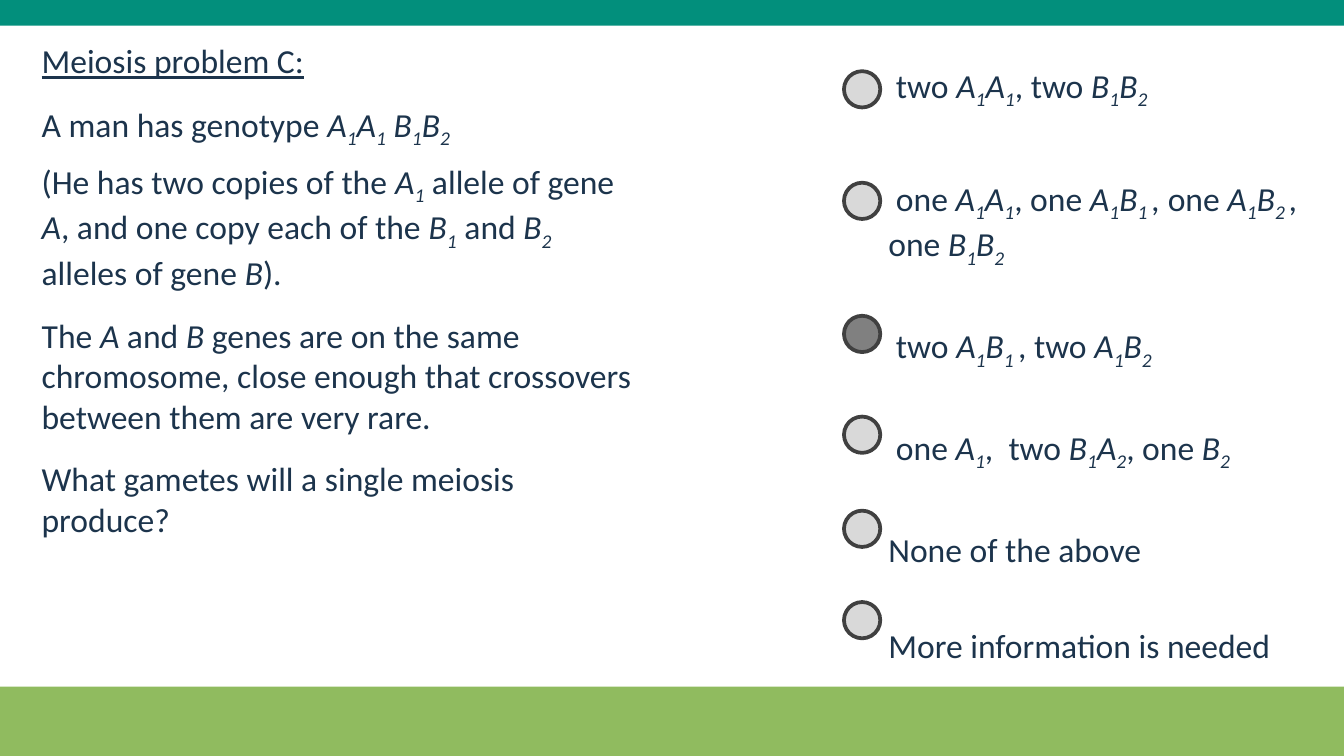
from itertools import groupby

from lxml.etree import SubElement
from pptx import Presentation
from pptx.dml.color import RGBColor
from pptx.enum.shapes import MSO_SHAPE
from pptx.enum.text import MSO_ANCHOR, MSO_AUTO_SIZE, PP_ALIGN
from pptx.oxml.ns import qn
from pptx.util import Inches, Pt

COLORS = {
    "text": "1C344C",
    "top": "028F7C",
    "base": "90BB5F",
    "light": "D9D9D9",
    "dark": "808080",
    "edge": "404040",
}
WIDTH = 10
HEIGHT = WIDTH * 9 / 16
BAND = 10.04

# Stars enclose genotypes; digits and underscores (spaces) are subscript.
# Each line is paired with the space after it in points.
PROBLEM = [
    ("A man has genotype *A1A1 B1B2*", 6),
    ("(He has two copies of the *A1* allele of gene *A*, and one copy each "
     "of the *B1* and* B2* alleles of gene *B*).", 12),
    ("The *A* and *B* genes are on the same chromosome, close enough that "
     "crossovers between them are very rare.", 12),
    ("What gametes will a single meiosis produce?", 12),
]
CHOICES = [
    (" two *A1A1*, two *B1B2*", 36),
    (" one *A1A1*, one *A1B1_, *one *A1B2_, *one *B1B2*", 30),
    (" two *A1B1_*, two *A1B2*", 30),
    (" one *A1*,  two *B1A2*, one *B2*", 30),
    ("None of the above", 30),
    ("More information is needed", 30),
]
BUTTON_TOPS = [0.53, 1.36, 2.35, 3.1, 3.8, 4.48]
MARKED = 2


class Deck:
    font, size = "Calibri", 18

    def __init__(self):
        self.file = Presentation()
        self.file.slide_width = Inches(WIDTH)
        self.file.slide_height = Inches(HEIGHT)
        layout = self.file.slide_layouts.get_by_name("Two Content")
        self.slide = self.file.slides.add_slide(layout)
        for holder in list(self.slide.placeholders):
            if holder.placeholder_format.idx > 2:
                holder.element.getparent().remove(holder.element)

    def shape(self, kind, box, fill, edge=None):
        item = self.slide.shapes.add_shape(kind, *map(Inches, box))
        item.shadow.inherit = False
        item.fill.solid()
        item.fill.fore_color.rgb = RGBColor.from_string(COLORS[fill])
        if edge:
            item.line.color.rgb = RGBColor.from_string(COLORS[edge])
            item.line.width = Pt(2)
        else:
            item.line.fill.background()

    def run(self, para, text, italic=False, sub=False, under=False):
        run = para.add_run()
        run.text = text
        font = run.font
        font.name, font.size = self.font, Pt(self.size)
        font.italic, font.underline = italic, under
        font.color.rgb = RGBColor.from_string(COLORS["text"])
        if sub:
            run._r.get_or_add_rPr().set("baseline", "-25000")

    def text(self, index, box, lines, under=False):
        holder = self.slide.placeholders[index]
        holder.left, holder.top, holder.width, holder.height = map(Inches, box)
        frame = holder.text_frame
        frame.word_wrap = True
        frame.auto_size = MSO_AUTO_SIZE.NONE
        frame.vertical_anchor = MSO_ANCHOR.TOP
        for row, (line, gap) in enumerate(lines):
            para = frame.add_paragraph() if row else frame.paragraphs[0]
            para.alignment = PP_ALIGN.LEFT
            para.space_before, para.space_after = Pt(0), Pt(gap)
            props = para._p.get_or_add_pPr()
            props.set("marL", "0")
            props.set("indent", "0")
            SubElement(props, qn("a:buNone"))
            for part, piece in enumerate(line.split("*")):
                if part % 2:
                    for sub, chars in groupby(piece, lambda c: c in "12_"):
                        word = "".join(chars).replace("_", " ")
                        self.run(para, word, italic=True, sub=sub)
                elif piece:
                    self.run(para, piece, under=under)


def main():
    deck = Deck()

    # Problem on the left, choices on the right
    deck.text(0, (0.21, 0.25, 4.67, 0.42), [("Meiosis problem C:", 0)], under=True)
    deck.text(1, (0.21, 0.72, 4.67, 3.25), PROBLEM)
    deck.text(2, (6.51, 0.43, 3.5, 4.41), CHOICES)

    # Bands
    deck.shape(MSO_SHAPE.RECTANGLE, (0, 5.11, BAND, 0.53), "base")
    deck.shape(MSO_SHAPE.RECTANGLE, (0, 0, BAND, 0.19), "top")

    # Answer buttons
    for row, top in enumerate(BUTTON_TOPS):
        fill = "dark" if row == MARKED else "light"
        deck.shape(MSO_SHAPE.OVAL, (6.28, top, 0.27, 0.27), fill, "edge")

    deck.file.save("out.pptx")


if __name__ == "__main__":
    main()
